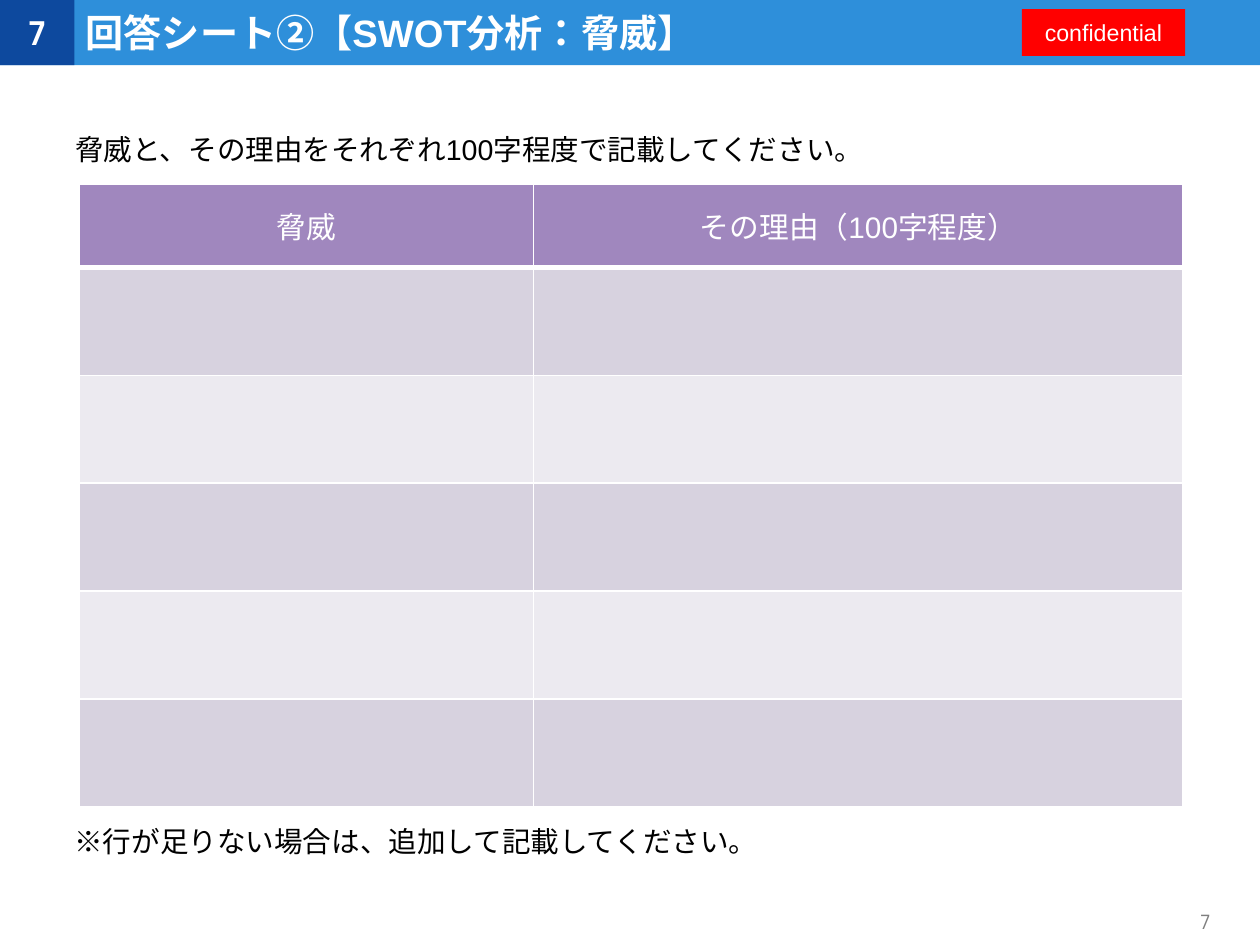
"""Build the SWOT threat answer sheet slide."""
import pptx
import pptx.dml.color
import pptx.enum.lang
import pptx.enum.shapes
import pptx.enum.text
import pptx.oxml
import pptx.oxml.ns
import pptx.util
from pptx.util import Inches

COLOURS = {
    "band": "2E8FDA", "number": "0D499E", "label": "FF0000",
    "white": "FFFFFF", "black": "000000", "grey": "7F7F7F",
    "header": "A087BE", "odd_row": "D7D2DF", "even_row": "ECEAF0",
}
LEFT = pptx.enum.text.PP_ALIGN.LEFT
CENTER = pptx.enum.text.PP_ALIGN.CENTER
MIDDLE = pptx.enum.text.MSO_ANCHOR.MIDDLE
SLIDE_WIDTH = 280 / 25.4
SLIDE_HEIGHT = 210 / 25.4
HEADINGS = ["脅威", "その理由（100字程度）"]
COLUMN_WIDTHS = [3.98, 5.68]
ROW_HEIGHTS = [0.73] + [4.72 / 5] * 5


def rgb(name):
    """Return the named colour."""
    return pptx.dml.color.RGBColor.from_string(COLOURS[name])


def write(text_frame, text, size, colour, font="Arial", bold=False, align=LEFT):
    """Set one formatted paragraph and return it."""
    text_frame.text = text
    text_frame.word_wrap = True
    text_frame.vertical_anchor = MIDDLE
    paragraph = text_frame.paragraphs[0]
    paragraph.alignment = align
    run_font = paragraph.runs[0].font
    run_font.language_id = pptx.enum.lang.MSO_LANGUAGE_ID.JAPANESE
    run_font.name = font
    run_font.size = pptx.util.Pt(size)
    run_font.bold = bold
    run_font.color.rgb = rgb(colour)
    return paragraph


def add_block(slide, left, top, width, height, fill):
    """Add a plain filled rectangle."""
    shape = slide.shapes.add_shape(
        pptx.enum.shapes.MSO_SHAPE.RECTANGLE,
        Inches(left), Inches(top), Inches(width), Inches(height))
    shape.shadow.inherit = False
    shape.fill.solid()
    shape.fill.fore_color.rgb = rgb(fill)
    shape.line.fill.background()
    return shape


def add_text_box(slide, left, top, width, height):
    """Add a text box and return its text frame."""
    return slide.shapes.add_textbox(
        Inches(left), Inches(top), Inches(width), Inches(height)).text_frame


def add_instruction(slide, left, top, text):
    """Add a line of instruction without insets."""
    text_frame = add_text_box(slide, left, top, 9.72, 0.41)
    text_frame.margin_left = text_frame.margin_right = 0
    text_frame.margin_top = text_frame.margin_bottom = 0
    write(text_frame, text, 18, "black").line_spacing = 1.5
    text_frame.vertical_anchor = pptx.enum.text.MSO_ANCHOR.TOP


def place_title(slide, text):
    """Place the title in front of the band."""
    title = slide.shapes.title
    title.left, title.top = Inches(0.65), Inches(0)
    title.width, title.height = Inches(8.22), Inches(0.57)
    write(title.text_frame, text, 24, "white", bold=True)
    title.text_frame.auto_size = pptx.enum.text.MSO_AUTO_SIZE.NONE
    title.element.getparent().append(title.element)


def set_borders(cell, widths):
    """Draw white cell borders with the given point widths."""
    properties = cell._tc.get_or_add_tcPr()
    for side, width in widths.items():
        properties.append(pptx.oxml.parse_xml(
            f'<a:ln{side} {pptx.oxml.ns.nsdecls("a")} w="{pptx.util.Pt(width)}">'
            f'<a:solidFill><a:srgbClr val="{COLOURS["white"]}"/></a:solidFill>'
            f'</a:ln{side}>'))


def add_answer_table(slide):
    """Add the table of threats and reasons with empty answer rows."""
    table = slide.shapes.add_table(
        len(ROW_HEIGHTS), len(COLUMN_WIDTHS), Inches(0.69), Inches(1.61),
        Inches(sum(COLUMN_WIDTHS)), Inches(sum(ROW_HEIGHTS))).table
    for column, width in zip(table.columns, COLUMN_WIDTHS):
        column.width = Inches(width)
    for row_index, height in enumerate(ROW_HEIGHTS):
        row = table.rows[row_index]
        row.height = Inches(height)
        fill = "odd_row" if row_index % 2 else "even_row"
        for column_index, cell in enumerate(row.cells):
            if row_index == 0:
                fill = "header"
                write(cell.text_frame, HEADINGS[column_index], 18.7, "white", align=CENTER)
                cell.vertical_anchor = MIDDLE
            top = 3 if row_index == 1 else 1
            bottom = 3 if row_index == 0 else 1
            set_borders(cell, {"L": 1, "R": 1, "T": top, "B": bottom})
            cell.fill.solid()
            cell.fill.fore_color.rgb = rgb(fill)


def main():
    """Build and save the slide."""
    presentation = pptx.Presentation()
    presentation.slide_width = Inches(SLIDE_WIDTH)
    presentation.slide_height = Inches(SLIDE_HEIGHT)
    slide = presentation.slides.add_slide(presentation.slide_layouts[5])

    add_block(slide, 0, 0, SLIDE_WIDTH, 0.57, "band")
    label = add_block(slide, 8.94, 0.08, 1.43, 0.41, "label")
    write(label.text_frame, "confidential", 14.6, "white", align=CENTER)
    number = add_block(slide, 0, 0, 0.65, 0.57, "number")
    write(number.text_frame, "7", 20.8, "white", "Manrope", True, CENTER)
    page = add_text_box(slide, 10.22, 7.78, 0.65, 0.57)
    write(page, "7", 12.5, "grey", "Manrope", align=CENTER)
    place_title(slide, "回答シート②【SWOT分析：脅威】")

    add_answer_table(slide)
    add_instruction(slide, 0.66, 1, "脅威と、その理由をそれぞれ100字程度で記載してください。")
    add_instruction(slide, 0.65, 7.06, "※行が足りない場合は、追加して記載してください。")
    presentation.save("out.pptx")


if __name__ == "__main__":
    main()
